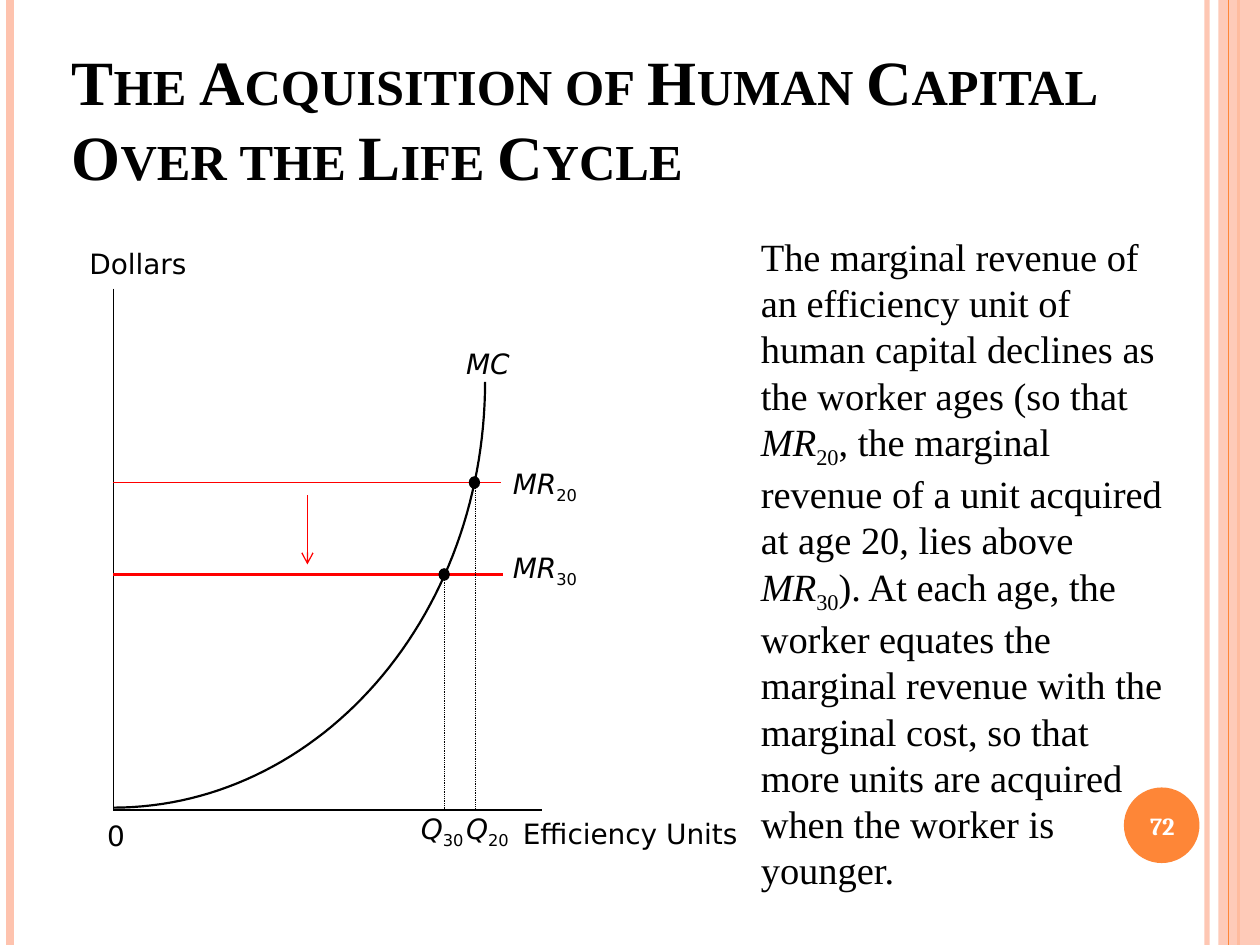
from dataclasses import dataclass
from math import cos, pi, sin

from lxml.etree import SubElement
from pptx import Presentation
from pptx.dml.color import RGBColor
from pptx.enum.dml import MSO_LINE
from pptx.enum.shapes import MSO_CONNECTOR, MSO_SHAPE
from pptx.enum.text import MSO_ANCHOR, PP_ALIGN
from pptx.oxml.ns import qn
from pptx.util import Inches, Pt

WIDTH, HEIGHT = 10, 7.5
BLACK, WHITE, RED = "000000", "FFFFFF", "FF0000"
ORANGE, PEACH = "FE8637", "FEC3AE"
SERIF, SANS, NUMBER_FONT = "Times New Roman", "DejaVu Sans", "Cambria"

ORIGIN_X, AXIS_Y = 0.9, 6.43
CURVE_TOP, CURVE_BOTTOM = 3.03, 6.41
CURVE_WIDTH = 2.95
MR20_Y, MR30_Y = 3.83, 4.56
Q20_X, Q30_X = 3.77, 3.53


@dataclass
class Line:
    start: tuple[float, float]
    end: tuple[float, float]
    color: str
    weight: float
    dotted: bool = False
    arrow: bool = False
    opacity: int = 100


@dataclass
class Run:
    text: str
    italic: bool = False
    subscript: bool = False


@dataclass
class Label:
    left: float
    top: float
    width: float
    height: float
    runs: list[Run]


def rgb(color: str) -> RGBColor:
    return RGBColor.from_string(color)


def symbol(name: str, index: str) -> list[Run]:
    """An italic variable name with an upright subscript."""
    return [Run(name, italic=True), Run(index, subscript=True)]


def set_opacity(properties, percent: int) -> None:
    color = next(properties.iter(qn("a:srgbClr")))
    SubElement(color, qn("a:alpha"), val=str(percent * 1000))


def draw_line(slide, line: Line) -> None:
    ends = [Inches(length) for length in (*line.start, *line.end)]
    connector = slide.shapes.add_connector(MSO_CONNECTOR.STRAIGHT, *ends)
    connector.line.color.rgb = rgb(line.color)
    connector.line.width = Pt(line.weight)
    properties = connector._element.spPr
    if line.dotted:
        connector.line.dash_style = MSO_LINE.ROUND_DOT
    if line.opacity < 100:
        set_opacity(properties, line.opacity)
    if line.arrow:
        SubElement(connector.line._get_or_add_ln(), qn("a:tailEnd"), type="arrow")
    SubElement(properties, qn("a:effectLst"))


def draw_shape(slide, kind, left: float, top: float, width: float, height: float,
               color: str, opacity: int = 100) -> None:
    shape = slide.shapes.add_shape(
        kind, Inches(left), Inches(top), Inches(width), Inches(height))
    shape.shadow.inherit = False
    shape.fill.solid()
    shape.fill.fore_color.rgb = rgb(color)
    shape.line.fill.background()
    if opacity < 100:
        set_opacity(shape._element.spPr, opacity)


def draw_text(slide, label: Label, size: float, font: str, color: str = BLACK,
              bold: bool = False, small_caps: bool = False, inset: float | None = None,
              anchor=MSO_ANCHOR.TOP, align=PP_ALIGN.LEFT) -> None:
    box = slide.shapes.add_textbox(Inches(label.left), Inches(label.top),
                                   Inches(label.width), Inches(label.height))
    frame = box.text_frame
    frame.word_wrap = True
    frame.vertical_anchor = anchor
    if inset is not None:
        frame.margin_left = frame.margin_right = Inches(inset)
        frame.margin_top = frame.margin_bottom = Inches(inset)
    paragraph = frame.paragraphs[0]
    paragraph.alignment = align
    for item in label.runs:
        run = paragraph.add_run()
        run.text = item.text
        run.font.size = Pt(size)
        run.font.name = font
        run.font.bold = bold
        run.font.italic = item.italic
        run.font.color.rgb = rgb(color)
        if item.subscript:
            run.font._element.set("baseline", "-25000")
        if small_caps:
            run.font._element.set("cap", "small")


def draw_cost_curve(slide, steps: int = 60) -> None:
    """A quarter ellipse rising from the origin to a vertical tangent."""
    curve_height = CURVE_BOTTOM - CURVE_TOP
    angles = [pi / 2 * step / steps for step in range(steps + 1)]
    points = [(Inches(ORIGIN_X + CURVE_WIDTH * sin(angle)),
               Inches(CURVE_TOP + curve_height * cos(angle))) for angle in angles]
    builder = slide.shapes.build_freeform(*points[0])
    builder.add_line_segments(points[1:], close=False)
    curve = builder.convert_to_shape()
    curve.shadow.inherit = False
    curve.fill.background()
    curve.line.color.rgb = rgb(BLACK)
    curve.line.width = Pt(1.25)


def draw_frame(slide) -> None:
    def stripe(x: float, color: str, weight: float, opacity: int = 100) -> None:
        draw_line(slide, Line((x, 0), (x, HEIGHT), color, weight, opacity=opacity))

    stripe(9.58, PEACH, 3, 93)
    stripe(0.08, PEACH, 4.5)
    stripe(9.83, ORANGE, 1.5)
    draw_shape(slide, MSO_SHAPE.RECTANGLE, 9.67, 0, 0.33, HEIGHT, PEACH, 87)
    stripe(9.75, ORANGE, 0.75)
    draw_shape(slide, MSO_SHAPE.OVAL, 8.92, 6.25, 0.6, 0.6, ORANGE)


def draw_diagram(slide) -> None:
    draw_cost_curve(slide)
    for line in (
        Line((ORIGIN_X, 2.29), (ORIGIN_X, AXIS_Y), BLACK, 1),
        Line((ORIGIN_X, AXIS_Y), (4.3, AXIS_Y), BLACK, 1),
        Line((ORIGIN_X, MR30_Y), (3.99, MR30_Y), RED, 1.25),
        Line((ORIGIN_X, MR20_Y), (3.98, MR20_Y), RED, 0.75),
        Line((Q30_X, MR30_Y), (Q30_X, AXIS_Y), BLACK, 0.5, dotted=True),
        Line((Q20_X, MR20_Y), (Q20_X, AXIS_Y), BLACK, 0.5, dotted=True),
        Line((2.44, 3.93), (2.44, 4.48), RED, 0.75, arrow=True),
    ):
        draw_line(slide, line)
    for x, y in ((Q20_X, MR20_Y), (Q30_X, MR30_Y)):
        draw_shape(slide, MSO_SHAPE.OVAL, x - 0.05, y - 0.05, 0.09, 0.1, BLACK)
    for label in (
        Label(3.69, 2.74, 0.41, 0.42, [Run("MC", italic=True)]),
        Label(4.06, 3.69, 0.68, 0.36, symbol("MR", "20")),
        Label(4.06, 4.36, 0.62, 0.42, symbol("MR", "30")),
        Label(0.7, 1.95, 0.94, 0.35, [Run("Dollars")]),
        Label(0.84, 6.49, 0.21, 0.32, [Run("0")]),
        Label(3.33, 6.43, 0.49, 0.48, symbol("Q", "30")),
        Label(3.69, 6.43, 0.4, 0.48, symbol("Q", "20")),
        Label(4.14, 6.47, 1.82, 0.49, [Run("Efficiency Units")]),
    ):
        draw_text(slide, label, 16, SANS, inset=0.01)


def main() -> None:
    presentation = Presentation()
    presentation.slide_width, presentation.slide_height = Inches(WIDTH), Inches(HEIGHT)
    slide = presentation.slides.add_slide(presentation.slide_layouts[6])
    draw_frame(slide)
    title = "The Acquisition of Human Capital Over the Life Cycle"
    draw_text(slide, Label(0.47, 0.23, 9, 1.41, [Run(title)]), 36, SERIF,
              bold=True, small_caps=True, anchor=MSO_ANCHOR.MIDDLE)
    draw_diagram(slide)
    explanation = [
        Run("The marginal revenue of an efficiency unit of human capital declines "
            "as the worker ages (so that "),
        *symbol("MR", "20"),
        Run(", the marginal revenue of a unit acquired at age 20, lies above "),
        *symbol("MR", "30"),
        Run("). At each age, the worker equates the marginal revenue with the marginal "
            "cost, so that more units are acquired when the worker is younger."),
    ]
    draw_text(slide, Label(5.94, 1.8, 3.5, 5.28, explanation), 22, SERIF)
    draw_text(slide, Label(8.89, 6.27, 0.67, 0.57, [Run("72")]), 14, NUMBER_FONT, WHITE,
              bold=True, anchor=MSO_ANCHOR.MIDDLE, align=PP_ALIGN.CENTER)
    presentation.save("out.pptx")


if __name__ == "__main__":
    main()
